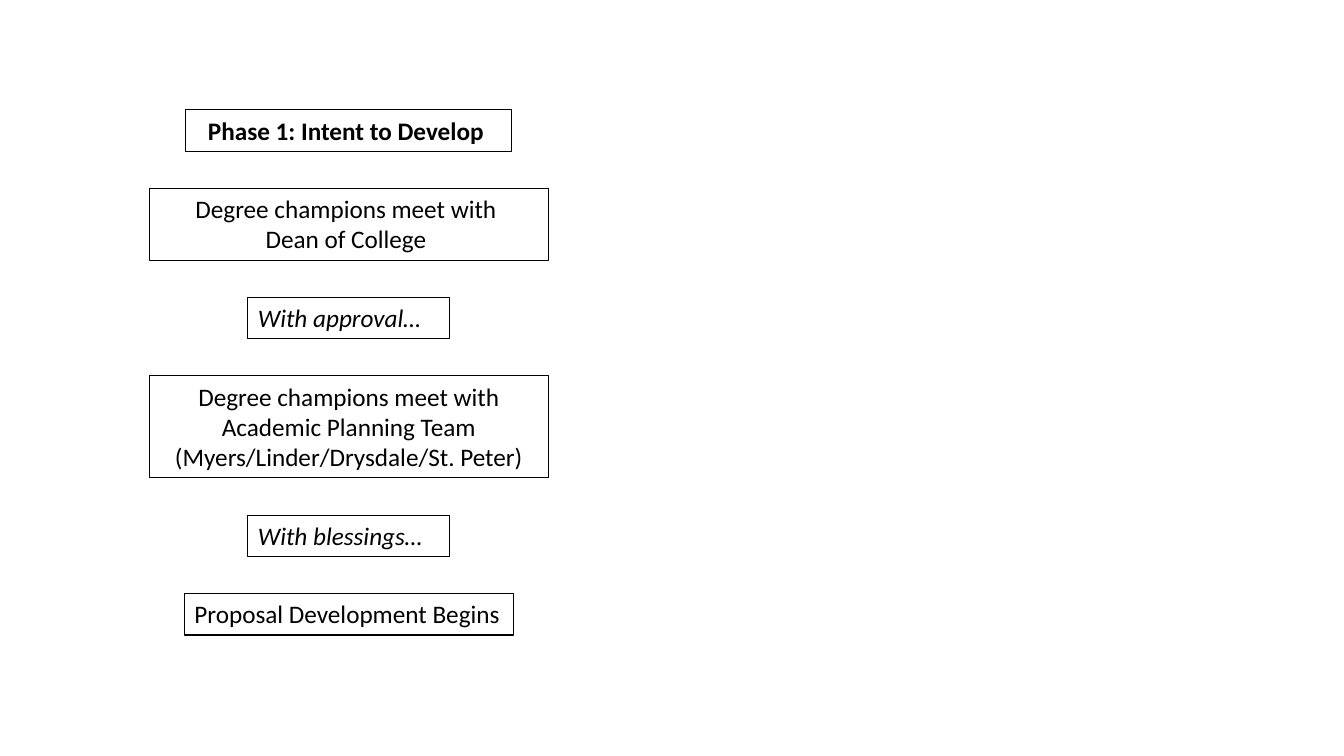
from pptx import Presentation
from pptx.dml.color import RGBColor
from pptx.enum.text import MSO_AUTO_SIZE, PP_ALIGN
from pptx.util import Inches, Pt

LEFT, CENTER = PP_ALIGN.LEFT, PP_ALIGN.CENTER
GROW = MSO_AUTO_SIZE.SHAPE_TO_FIT_TEXT
BLACK = RGBColor(0, 0, 0)

# paragraphs, lines shown, box width, alignment, bold, italic
STEPS = [
    (["Phase 1: Intent to Develop "], 1, 3.23, CENTER, True, False),
    (["Degree champions meet with ", "Dean of College "],
     2, 3.96, CENTER, False, False),
    (["With approval…"], 1, 2, LEFT, False, True),
    (["Degree champions meet with Academic Planning Team "
      "(Myers/Linder/Drysdale/St. Peter)"], 3, 3.96, CENTER, False, False),
    (["With blessings…"], 1, 2, LEFT, False, True),
    (["Proposal Development Begins"], 1, 3.26, LEFT, False, False),
]

COLUMN_CENTER = 3.46
FIRST_TOP = 1.09
GAP = 0.37
LINE_HEIGHT = 0.3
PADDING = 0.11


def add_step(slide, top, height, paragraphs, width, align, bold, italic):
    box = slide.shapes.add_textbox(
        Inches(COLUMN_CENTER - width / 2), Inches(top),
        Inches(width), Inches(height))
    box.line.color.rgb = BLACK
    box.line.width = Pt(0.75)
    frame = box.text_frame
    frame.word_wrap = True
    frame.auto_size = GROW
    frame.text = "\n".join(paragraphs)
    for paragraph in frame.paragraphs:
        paragraph.alignment = align
        font = paragraph.font
        font.name = "Calibri"
        font.size = Pt(18)
        font.bold = bold
        font.italic = italic
        font.color.rgb = BLACK


def main():
    prs = Presentation()
    prs.slide_width = Inches(13.33)
    prs.slide_height = Inches(7.5)
    blank_layout = prs.slide_layouts[6]
    slide = prs.slides.add_slide(blank_layout)

    top = FIRST_TOP
    for paragraphs, lines, width, align, bold, italic in STEPS:
        height = PADDING + lines * LINE_HEIGHT
        add_step(slide, top, height, paragraphs, width, align, bold, italic)
        top += height + GAP

    prs.save("out.pptx")


if __name__ == "__main__":
    main()
